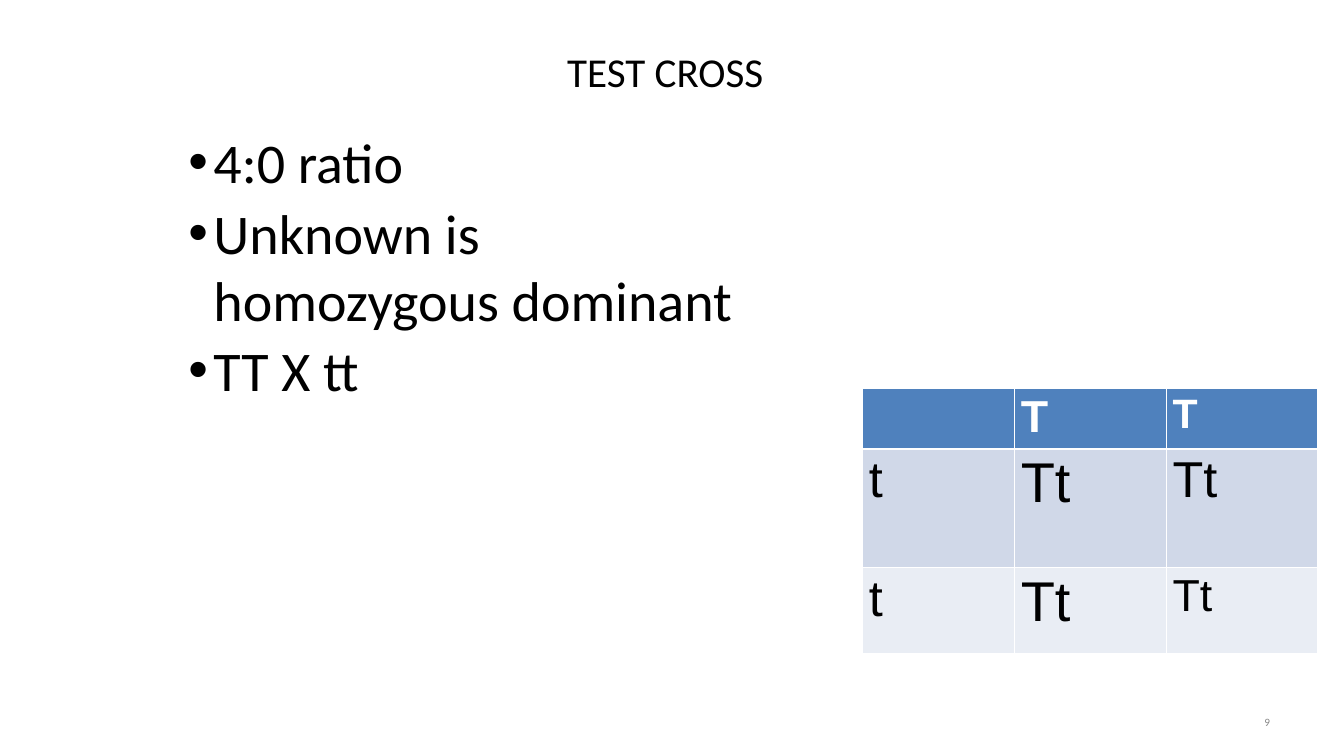
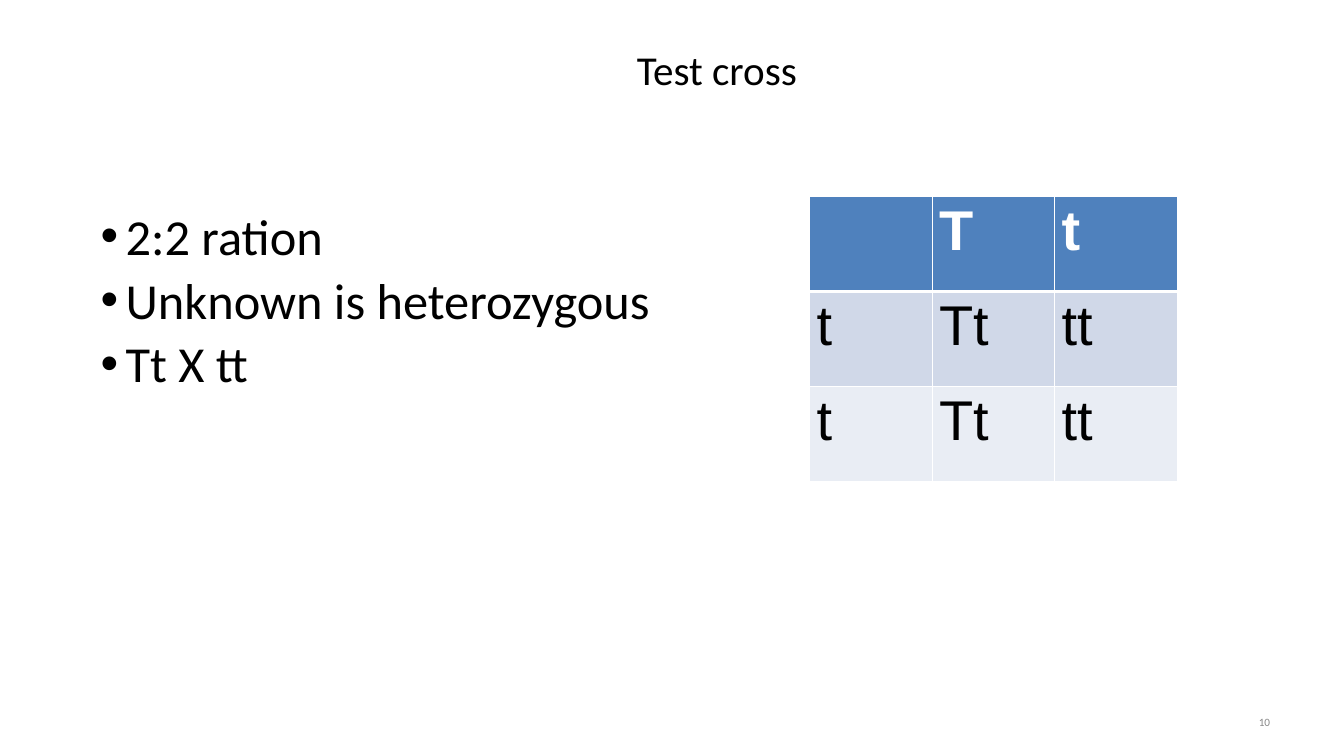
import lxml.etree
import pptx
import pptx.dml.color
import pptx.enum.text
import pptx.oxml.ns
import pptx.util
from dataclasses import dataclass

Cm = pptx.util.Cm
Pt = pptx.util.Pt
Color = pptx.dml.color.RGBColor.from_string
Align = pptx.enum.text.PP_ALIGN
Anchor = pptx.enum.text.MSO_ANCHOR
qn = pptx.oxml.ns.qn


@dataclass(frozen=True)
class Theme:
    text: str = "000000"
    number: str = "888888"
    white: str = "FFFFFF"
    row_fills: tuple = ("4F81BD", "D0D8E8", "E9EDF4")
    text_font: str = "Calibri"
    table_font: str = "Arial"
    title_size: int = 44
    number_size: int = 12
    bullet_gap: float = 3.6
    thin_border: int = 1
    header_border: int = 3


theme = Theme()

# Lengths are centimetres, sizes are points
pages = [
    {
        "title": "TEST CROSS", "title_at": (13.72, 1.09),
        "points": ["4:0 ratio", "Unknown is homozygous dominant", "TT X tt"],
        "points_at": (6.55, 4.7), "points_size": 60,
        "number": "9",
        "square": [["", "T", "T"], ["t", "Tt", "Tt"], ["t", "Tt", "Tt"]],
        "square_sizes": [[18, 48, 44], [54, 60, 54], [54, 60, 48]],
        "square_at": (32.59, 14.68), "column": 5.74, "rows": (2.1, 4.5, 3.22),
    },
    {
        "title": "Test cross", "title_at": (15.67, 1.02),
        "points": ["2:2 ration", "Unknown is heterozygous", "Tt X tt"],
        "points_at": (3.23, 7.62), "points_size": 54,
        "number": "10",
        "square": [["", "T", "t"], ["t", "Tt", "tt"], ["t", "Tt", "tt"]],
        "square_sizes": [[60] * 3] * 3,
        "square_at": (30.61, 7.44), "column": 4.63, "rows": (3.58,) * 3,
    },
]


def add_text(page, place, extent, lines, look, align, anchor, bullets=False):
    box = page.shapes.add_textbox(*map(Cm, place + extent))
    frame = box.text_frame
    frame.word_wrap = True
    frame.vertical_anchor = anchor
    for index, line in enumerate(lines):
        para = frame.paragraphs[0] if index == 0 else frame.add_paragraph()
        para.alignment = align
        if bullets:
            settings = para._p.get_or_add_pPr()
            settings.set("marL", str(Cm(1.27)))
            settings.set("indent", str(-Cm(0.95)))
            tint = lxml.etree.SubElement(settings, qn("a:buClr"))
            lxml.etree.SubElement(tint, qn("a:srgbClr"), val=theme.text)
            lxml.etree.SubElement(settings, qn("a:buFont"), typeface=theme.table_font)
            lxml.etree.SubElement(settings, qn("a:buChar"), char="•")
            if index:
                para.space_before = Pt(theme.bullet_gap)
        add_span(para, line, look)


def add_span(para, words, look):
    span = para.add_run()
    span.text = words
    span.font.color.rgb = Color(look["color"])
    for name, value in look["font"].items():
        setattr(span.font, name, value)


deck = pptx.Presentation()
deck.slide_width, deck.slide_height = Cm(50.8), Cm(28.58)

for content in pages:
    page = deck.slides.add_slide(deck.slide_layouts[6])

    # Title, bullet points and page number
    title_look = {"color": theme.text,
                  "font": {"name": theme.text_font, "size": Pt(theme.title_size)}}
    points_look = {"color": theme.text,
                   "font": {"name": theme.text_font, "size": Pt(content["points_size"])}}
    number_look = {"color": theme.number,
                   "font": {"name": theme.text_font, "size": Pt(theme.number_size)}}
    add_text(page, content["title_at"], (22.86, 3.18), [content["title"]],
             title_look, Align.CENTER, Anchor.MIDDLE)
    add_text(page, content["points_at"], (22.86, 12.57), content["points"],
             points_look, Align.LEFT, Anchor.TOP, bullets=True)
    add_text(page, (42.34, 26.77), (5.92, 1.02), [content["number"]],
             number_look, Align.RIGHT, Anchor.MIDDLE)

    # Punnett square
    extent = (content["column"] * 3, sum(content["rows"]))
    square = page.shapes.add_table(3, 3, *map(Cm, content["square_at"] + extent)).table
    for column in square.columns:
        column.width = Cm(content["column"])
    for row_index, height in enumerate(content["rows"]):
        square.rows[row_index].height = Cm(height)
        is_header = row_index == 0
        for column_index, words in enumerate(content["square"][row_index]):
            cell = square.cell(row_index, column_index)
            cell.fill.solid()
            cell.fill.fore_color.rgb = Color(theme.row_fills[row_index])
            size = Pt(content["square_sizes"][row_index][column_index])
            para = cell.text_frame.paragraphs[0]
            if words:
                add_span(para, words, {
                    "color": theme.white if is_header else theme.text,
                    "font": {"name": theme.table_font, "size": size, "bold": is_header},
                })
            else:
                para.font.size = size

            # White cell borders, heavier under the header
            settings = cell._tc.get_or_add_tcPr()
            for order, side in enumerate("LRTB"):
                under_header = (row_index, side) in ((0, "B"), (1, "T"))
                width = theme.header_border if under_header else theme.thin_border
                border = lxml.etree.Element(qn(f"a:ln{side}"), w=str(Pt(width)))
                paint = lxml.etree.SubElement(border, qn("a:solidFill"))
                lxml.etree.SubElement(paint, qn("a:srgbClr"), val=theme.white)
                settings.insert(order, border)

deck.save("out.pptx")
